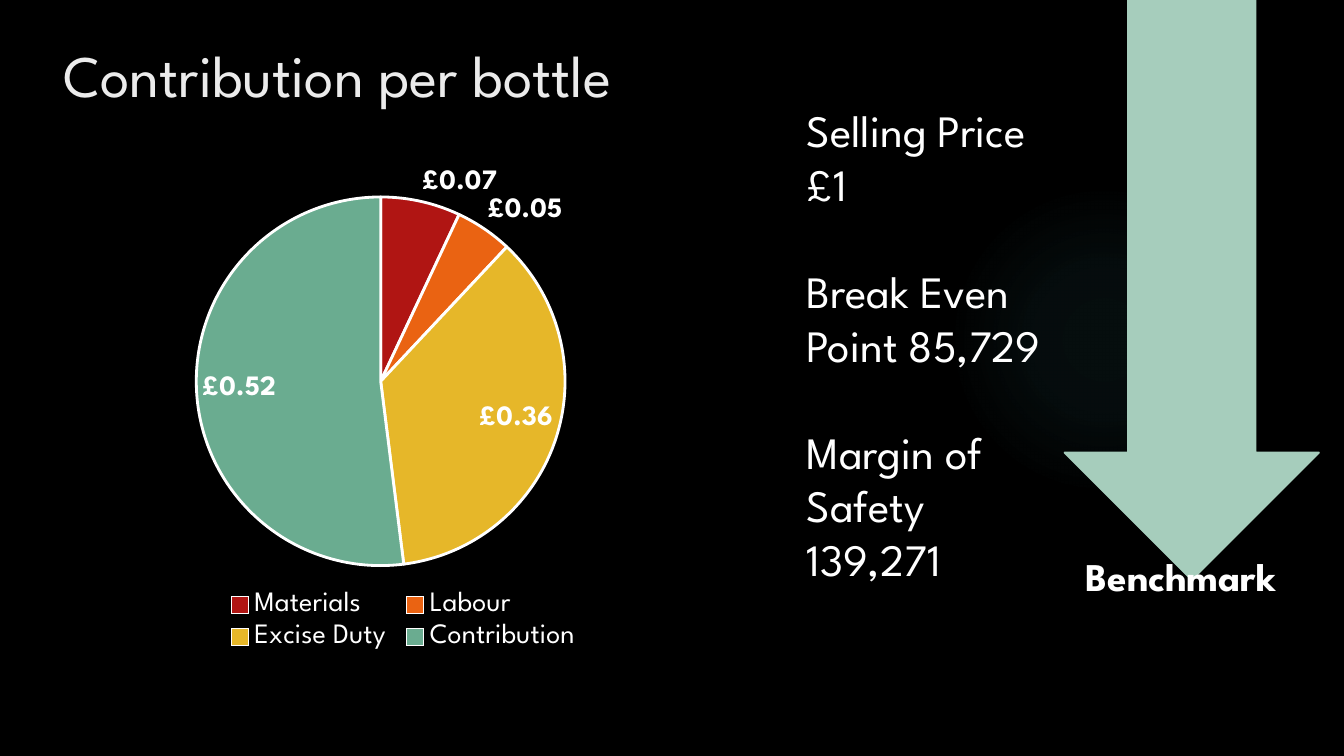
from lxml import etree
from pptx import Presentation
from pptx.chart.data import CategoryChartData
from pptx.dml.color import RGBColor
from pptx.enum.chart import XL_CHART_TYPE, XL_LABEL_POSITION, XL_LEGEND_POSITION
from pptx.enum.shapes import MSO_SHAPE
from pptx.enum.text import MSO_ANCHOR, MSO_AUTO_SIZE, PP_ALIGN
from pptx.oxml import parse_xml
from pptx.oxml.ns import nsdecls, qn
from pptx.util import Inches, Pt

PIE = XL_CHART_TYPE.PIE
BEST_FIT = XL_LABEL_POSITION.BEST_FIT
BOTTOM = XL_LEGEND_POSITION.BOTTOM
OVAL, DOWN_ARROW = MSO_SHAPE.OVAL, MSO_SHAPE.DOWN_ARROW
TOP, LEFT = MSO_ANCHOR.TOP, PP_ALIGN.LEFT
NO_AUTOFIT = MSO_AUTO_SIZE.NONE

BLACK = RGBColor(0x00, 0x00, 0x00)
WHITE = RGBColor(0xFF, 0xFF, 0xFF)
OFF_WHITE = RGBColor(0xEB, 0xEB, 0xEB)
MINT = RGBColor(0xA6, 0xCD, 0xBC)
TEAL = RGBColor(0x50, 0xB9, 0xC1)
RED = RGBColor(0xB0, 0x15, 0x13)
ORANGE = RGBColor(0xEA, 0x63, 0x12)
GOLD = RGBColor(0xE6, 0xB7, 0x29)
GREEN = RGBColor(0x6A, 0xAC, 0x90)

COSTS = [
    ("Materials", 0.07, RED),
    ("Labour", 0.05, ORANGE),
    ("Excise Duty", 0.36, GOLD),
    ("Contribution", 0.52, GREEN),
]
# Each measure with the space before it, in points
MEASURES = [
    ("Selling Price £1", 0),
    ("Break Even Point 85,729", 38),
    ("Margin of Safety", 38),
    ("139,271", 0),
]


def place(shape, box):
    shape.left, shape.top, shape.width, shape.height = map(Inches, box)


def set_layout(parent, index, fractions, inner=False):
    """Fix a chart part at x, y, w, h, given as fractions of the chart."""
    for old in parent.findall(qn("c:layout")):
        parent.remove(old)
    layout = etree.Element(qn("c:layout"))
    manual = etree.SubElement(layout, qn("c:manualLayout"))
    settings = [("layoutTarget", "inner")] if inner else []
    settings += [("xMode", "edge"), ("yMode", "edge")]
    settings += zip("xywh", map(str, fractions))
    for tag, value in settings:
        etree.SubElement(manual, qn(f"c:{tag}")).set("val", value)
    parent.insert(index, layout)


class SlideBuilder:
    font_name = "League Spartan"

    def __init__(self, deck):
        self.slide = deck.slides.add_slide(deck.slide_layouts[1])
        self.slide.background.fill.solid()
        self.slide.background.fill.fore_color.rgb = BLACK

    def style(self, font, size, color=WHITE, bold=False):
        font.name, font.size, font.bold = self.font_name, Pt(size), bold
        font.color.rgb = color

    def title(self, text, box):
        title = self.slide.shapes.title
        place(title, box)
        frame = title.text_frame
        frame.text = text
        frame.vertical_anchor, frame.auto_size = TOP, NO_AUTOFIT
        frame.paragraphs[0].alignment = LEFT
        self.style(frame.paragraphs[0].runs[0].font, 42, OFF_WHITE)

    def measures(self, items, box):
        body = self.slide.placeholders[1]
        place(body, box)
        frame = body.text_frame
        frame.text = "\n".join(text for text, _ in items)
        frame.vertical_anchor, frame.auto_size = TOP, NO_AUTOFIT
        for paragraph, (_, gap) in zip(frame.paragraphs, items):
            properties = paragraph._p.get_or_add_pPr()
            properties.set("marL", "0")
            properties.set("indent", "0")
            etree.SubElement(properties, qn("a:buNone"))
            paragraph.space_before = Pt(gap)
            self.style(paragraph.runs[0].font, 32)

    def label(self, text, box):
        label = self.slide.shapes.add_textbox(*map(Inches, box))
        label.text_frame.word_wrap = False
        label.text_frame.text = text
        self.style(label.text_frame.paragraphs[0].runs[0].font, 28, bold=True)

    def shape(self, kind, box):
        shape = self.slide.shapes.add_shape(kind, *map(Inches, box))
        shape.shadow.inherit = False
        return shape

    def arrow(self, box):
        arrow = self.shape(DOWN_ARROW, box)
        arrow.fill.solid()
        arrow.fill.fore_color.rgb = MINT
        arrow.line.color.rgb = MINT
        arrow.line.width = Pt(1.5)

    def glow(self, box):
        """Add a faint radial light behind everything else."""
        glow = self.shape(OVAL, box)
        glow.line.fill.background()
        stops = "".join(
            f'<a:gs pos="{position * 1000}"><a:srgbClr val="{TEAL}">'
            f'<a:alpha val="{alpha * 1000}"/></a:srgbClr></a:gs>'
            for position, alpha in [(0, 7), (36, 6), (69, 0), (100, 0)]
        )
        gradient = parse_xml(
            f'<a:gradFill {nsdecls("a")}><a:gsLst>{stops}</a:gsLst>'
            '<a:path path="circle"><a:fillToRect l="50000" t="50000" '
            'r="50000" b="50000"/></a:path></a:gradFill>'
        )
        glow._element.spPr.find(qn("a:prstGeom")).addnext(gradient)
        self.slide.shapes._spTree.insert(2, glow._element)

    def pie(self, slices, box):
        data = CategoryChartData(number_format='"£"#,##0.00')
        data.categories = [name for name, _, _ in slices]
        data.add_series("Series 1", [value for _, value, _ in slices])
        chart = self.slide.shapes.add_chart(PIE, *map(Inches, box), data).chart
        chart.has_title = False
        self.style(chart.font, 10)

        plot = chart.plots[0]
        plot.vary_by_categories = True
        for index, (_, _, color) in enumerate(slices):
            part = plot.series[0].points[index].format
            part.fill.solid()
            part.fill.fore_color.rgb = color
            part.line.color.rgb = WHITE
            part.line.width = Pt(2)

        labels = plot.series[0].data_labels
        labels.show_value = True
        labels.number_format = '"£"#,##0.00'
        labels.number_format_is_linked = False
        labels.position = BEST_FIT
        self.style(labels.font, 20, bold=True)

        chart.has_legend = True
        chart.legend.position = BOTTOM
        chart.legend.include_in_layout = False
        self.style(chart.legend.font, 20)
        plot_area = chart._chartSpace.chart.plotArea
        set_layout(plot_area, 0, (0.206, 0.087, 0.533, 0.733), inner=True)
        set_layout(chart.legend._element, 1, (0.24, 0.86, 0.53, 0.14))


def main():
    deck = Presentation()
    deck.slide_width, deck.slide_height = Inches(13.33), Inches(7.5)
    builder = SlideBuilder(deck)
    builder.glow((9.41, 1.83, 3.08, 3.08))
    builder.arrow((10.56, 0, 2.52, 5.75))
    builder.label("Benchmark", (10.67, 5.43, 2.38, 0.57))
    builder.title("Contribution per bottle", (0.53, 0.33, 10.29, 1.53))
    builder.pie(COSTS, (0.53, 1.52, 6.87, 4.99))
    builder.measures(MEASURES, (7.9, 0.97, 2.68, 6.09))
    deck.save("out.pptx")


if __name__ == "__main__":
    main()
